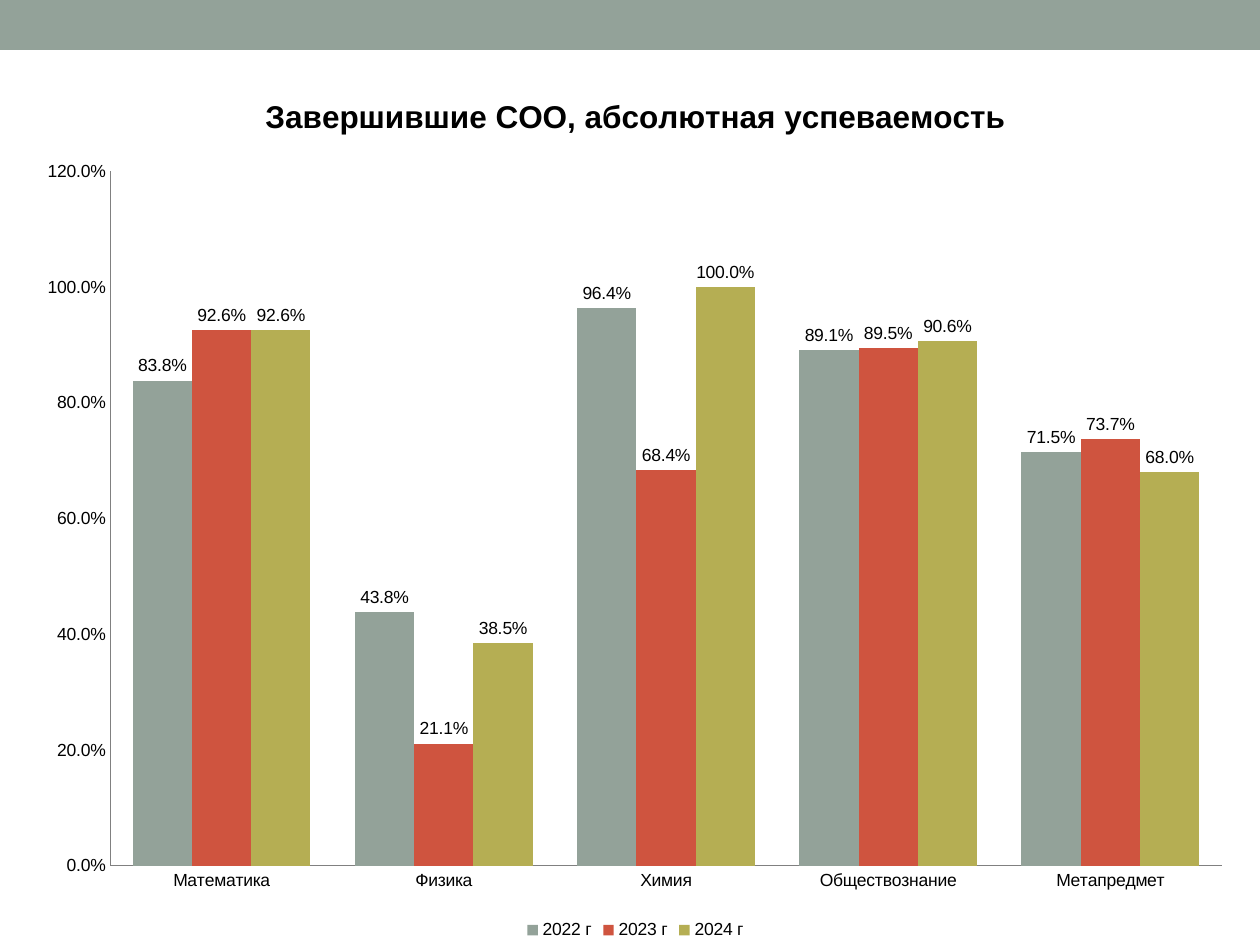
from dataclasses import dataclass

from lxml import etree
from pptx import Presentation
from pptx.chart.data import CategoryChartData
from pptx.dml.color import RGBColor
from pptx.enum.chart import XL_CHART_TYPE, XL_LABEL_POSITION, XL_LEGEND_POSITION, XL_TICK_MARK
from pptx.enum.shapes import MSO_SHAPE
from pptx.util import Emu, Pt

COLUMNS = XL_CHART_TYPE.COLUMN_CLUSTERED
ABOVE_BAR = XL_LABEL_POSITION.OUTSIDE_END
BOTTOM = XL_LEGEND_POSITION.BOTTOM
NO_TICK = XL_TICK_MARK.NONE
RECTANGLE = MSO_SHAPE.RECTANGLE

PX_PER_INCH = 126
EMU_PER_PX = 914400 / PX_PER_INCH
CHART_NS = "http://schemas.openxmlformats.org/drawingml/2006/chart"
PERCENT = "0.0%"


@dataclass(frozen=True)
class Theme:
    font: str = "Arial"
    text: str = "000000"
    band: str = "93A299"
    axis: str = "808080"
    years: tuple = ("93A299", "CF543F", "B5AE53")
    title_size: int = 18
    body_size: int = 10


THEME = Theme()

SUBJECTS = ["Математика", "Физика", "Химия", "Обществознание", "Метапредмет"]
PASS_RATES = {
    "2022 г": [0.838, 0.438, 0.964, 0.891, 0.715],
    "2023 г": [0.926, 0.211, 0.684, 0.895, 0.737],
    "2024 г": [0.926, 0.385, 1, 0.906, 0.68],
}


def px(length):
    return Emu(round(length * EMU_PER_PX))


def paint(fill, color):
    fill.solid()
    fill.fore_color.rgb = RGBColor.from_string(color)


def style_font(font, size=THEME.body_size, bold=False, color=THEME.text):
    font.name = THEME.font
    font.size = Pt(size)
    font.bold = bold
    font.color.rgb = RGBColor.from_string(color)


def write_text(frame, text, **font_format):
    run = frame.paragraphs[0].add_run()
    run.text = text
    style_font(run.font, **font_format)


def add_band(slide, left, top, width, height):
    band = slide.shapes.add_shape(RECTANGLE, px(left), px(top), px(width), px(height))
    band.shadow.inherit = False
    paint(band.fill, THEME.band)
    band.line.fill.background()


def set_plot_box(chart, **fractions):
    plot_area = chart.element.find(f".//{{{CHART_NS}}}plotArea")
    for old_layout in plot_area.findall(f"{{{CHART_NS}}}layout"):
        plot_area.remove(old_layout)
    layout = etree.Element(f"{{{CHART_NS}}}layout")
    manual = etree.SubElement(layout, f"{{{CHART_NS}}}manualLayout")
    settings = {"layoutTarget": "inner", "xMode": "edge", "yMode": "edge", **fractions}
    for tag, value in settings.items():
        etree.SubElement(manual, f"{{{CHART_NS}}}{tag}").set("val", str(value))
    plot_area.insert(0, layout)


def style_axes(chart):
    for axis in (chart.category_axis, chart.value_axis):
        axis.major_tick_mark = NO_TICK
        axis.minor_tick_mark = NO_TICK
        axis.has_major_gridlines = False
        paint(axis.format.line.fill, THEME.axis)
        style_font(axis.tick_labels.font)
    rates = chart.value_axis
    rates.minimum_scale = 0
    rates.maximum_scale = 1.2
    rates.major_unit = 0.2
    rates.tick_labels.number_format = PERCENT
    rates.tick_labels.number_format_is_linked = False


def style_columns(chart):
    columns = chart.plots[0]
    columns.gap_width = 75
    columns.overlap = 0
    columns.vary_by_categories = False
    for year, color in zip(columns.series, THEME.years):
        paint(year.format.fill, color)
        year.invert_if_negative = False
        labels = year.data_labels
        labels.show_value = True
        labels.number_format = PERCENT
        labels.number_format_is_linked = False
        labels.position = ABOVE_BAR
        style_font(labels.font)


def add_results_chart(slide, left, top, width, height):
    results = CategoryChartData(number_format=PERCENT)
    results.categories = SUBJECTS
    for year, rates in PASS_RATES.items():
        results.add_series(year, rates)
    chart = slide.shapes.add_chart(
        COLUMNS, px(left), px(top), px(width), px(height), results
    ).chart
    style_font(chart.font)
    chart.has_title = True
    write_text(
        chart.chart_title.text_frame,
        "Завершившие СОО, абсолютная успеваемость",
        size=THEME.title_size,
        bold=True,
    )
    chart.has_legend = True
    chart.legend.position = BOTTOM
    chart.legend.include_in_layout = False
    style_font(chart.legend.font)
    style_axes(chart)
    style_columns(chart)
    set_plot_box(chart, x=0.07, y=0.12, w=0.91, h=0.79)


def main():
    deck = Presentation()
    deck.slide_width, deck.slide_height = px(1260), px(945)
    slide = deck.slides.add_slide(deck.slide_layouts[6])
    add_band(slide, 0, 0, 1260, 50)
    add_results_chart(slide, 25, 66, 1221, 879)
    deck.save("out.pptx")


if __name__ == "__main__":
    main()
